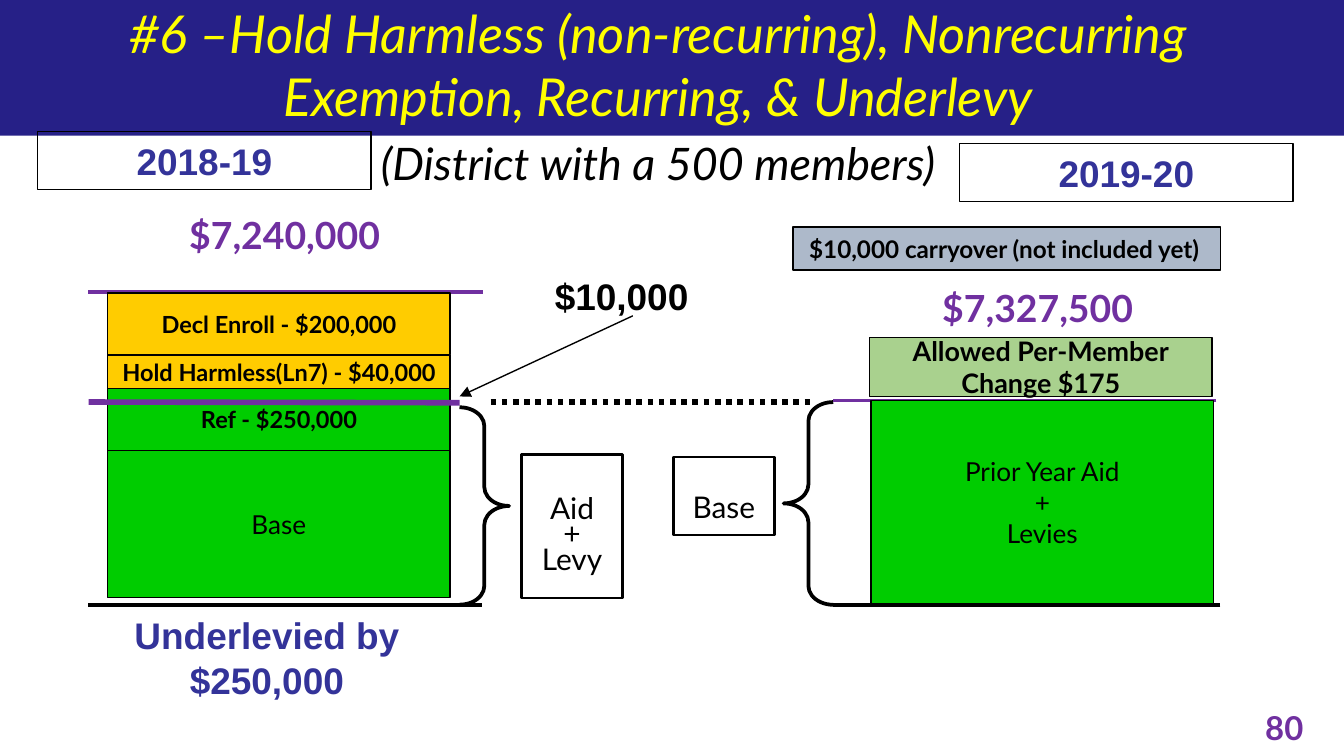
import collections

import pptx
import pptx.dml.color
import pptx.enum.dml
import pptx.enum.shapes
import pptx.enum.text
import pptx.oxml
import pptx.oxml.ns
import pptx.util

Pt = pptx.util.Pt
SHAPES = pptx.enum.shapes.MSO_SHAPE
ANCHOR = pptx.enum.text.MSO_ANCHOR
Box = collections.namedtuple("Box", "left top width height")

COLORS = {
    "black": "000000",
    "banner": "262087",
    "yellow": "FFFF00",
    "purple": "7030A0",
    "navy": "333399",
    "green": "00CC00",
    "gold": "FFCC00",
    "sage": "A9D18E",
    "slate": "ADB9CA",
}
BAR_WIDTH = 183.6


def rgb(name):
    return pptx.dml.color.RGBColor.from_string(COLORS[name])


def inside(box, left, top, width, height):
    return Box(box.left + left, box.top + top, width, height)


def write(shape, text, size, color="black", font="Lato", bold=False,
          italic=False, wrap=True, anchor=ANCHOR.TOP):
    frame = shape.text_frame
    frame.text = text
    frame.word_wrap = wrap
    frame.vertical_anchor = anchor
    for paragraph in frame.paragraphs:
        paragraph.alignment = pptx.enum.text.PP_ALIGN.CENTER
        for run in paragraph.runs:
            run.font.name = font
            run.font.size = Pt(size)
            run.font.bold = bold
            run.font.italic = italic
            run.font.color.rgb = rgb(color)


def add_label(slide, box, text, size, **style):
    label = slide.shapes.add_textbox(*map(Pt, box))
    write(label, text, size, **style)
    return label


def add_outline(slide, box, fill=None, line="black", weight=0.75, kind=SHAPES.RECTANGLE):
    shape = slide.shapes.add_shape(kind, *map(Pt, box))
    shape.shadow.inherit = False
    if fill:
        shape.fill.solid()
        shape.fill.fore_color.rgb = rgb(fill)
    else:
        shape.fill.background()
    if line:
        shape.line.color.rgb = rgb(line)
        shape.line.width = Pt(weight)
    else:
        shape.line.fill.background()
    return shape


def add_bar(slide, box, text, size, fill, bold=True):
    bar = add_outline(slide, box, fill)
    write(bar, text, size, bold=bold, wrap=False, anchor=ANCHOR.MIDDLE)


def add_year(slide, box, text):
    write(add_outline(slide, box), text, 19.8, color="navy", font="Arial", bold=True)


def add_brace(slide, box, kind):
    brace = add_outline(slide, box, weight=2, kind=kind)
    brace.adjustments[0] = 0.38
    brace.adjustments[1] = 0.5


def add_line(slide, box, start, end, color="black", weight=2):
    line = slide.shapes.add_connector(
        pptx.enum.shapes.MSO_CONNECTOR.STRAIGHT,
        Pt(box.left + start[0]), Pt(box.top + start[1]),
        Pt(box.left + end[0]), Pt(box.top + end[1]))
    line.line.color.rgb = rgb(color)
    line.line.width = Pt(weight)
    pptx.oxml.ns.qn("a:effectLst")
    line._element.spPr.append(pptx.oxml.parse_xml(
        "<a:effectLst %s/>" % pptx.oxml.ns.nsdecls("a")))
    return line


def add_tight_box(slide, box, text, top_inset):
    shape = add_outline(slide, box, weight=1.5)
    write(shape, text, 16)
    shape.text_frame.margin_top = Pt(top_inset)
    for paragraph in shape.text_frame.paragraphs:
        paragraph.line_spacing = Pt(13.7)


def add_header(slide, box):
    add_outline(slide, box, "banner", line=None)
    title = add_label(
        slide, inside(box, 0, -3, 714, 110),
        "#6 –Hold Harmless (non-recurring), Nonrecurring Exemption, Recurring, & Underlevy\n"
        "(District with a 500 members)",
        28, color="yellow", italic=True)
    title.text_frame.margin_right = Pt(16)
    subtitle = title.text_frame.paragraphs[1]
    subtitle.space_before = Pt(4.8)
    subtitle.runs[0].font.size = Pt(24)
    subtitle.runs[0].font.color.rgb = rgb("black")


def add_prior_year(slide, box):
    add_year(slide, inside(box, 0, 0, 178.6, 31), "2018-19")
    add_label(slide, inside(box, 43, 39.6, 178.6, 31.7), "$7,240,000", 20,
              color="purple", bold=True)
    add_line(slide, box, (238, 253.5), (27, 253.5))
    add_line(slide, box, (238.5, 85.7), (27, 85.7), "purple", 2.25)
    top = 86.5
    for text, size, height, fill, bold in (
        ("Decl Enroll - $200,000", 12.6, 33, "gold", True),
        ("Hold Harmless(Ln7) - $40,000", 12.6, 18, "gold", True),
        ("Ref - $250,000", 12.6, 33.2, "green", True),
        ("Base", 14, 78.8, "green", False),
    ):
        add_bar(slide, inside(box, 37.4, top, BAR_WIDTH, height), text, size, fill, bold)
        top += height
    add_line(slide, box, (226, 145.2), (27.3, 144.8), "purple", 3)
    add_label(slide, inside(box, 9.4, 254.2, 226.8, 55.5), "Underlevied by $250,000", 19.8,
              color="navy", font="Arial", bold=True)


def add_comparison(slide, box):
    add_brace(slide, inside(box, 0, 75, 26.6, 105.8), SHAPES.RIGHT_BRACE)
    add_tight_box(slide, inside(box, 33.2, 100.2, 54, 77), "Aid\n+\nLevy", 24.3)
    add_tight_box(slide, inside(box, 114.6, 101.6, 54, 41.8), "Base", 22.7)
    add_brace(slide, inside(box, 173.6, 72.2, 26.6, 108.6), SHAPES.LEFT_BRACE)
    add_label(slide, inside(box, 38.2, 0, 97.2, 31), "$10,000", 19.8, font="Arial", bold=True)
    arrow = add_line(slide, box, (92.8, 26), (0, 69.2), weight=0.75)
    arrow.line._get_or_add_ln().append(pptx.oxml.parse_xml(
        '<a:tailEnd %s type="triangle"/>' % pptx.oxml.ns.nsdecls("a")))
    dots = add_line(slide, box, (16.6, 72.2), (189.4, 72.2), weight=3)
    dots.line.dash_style = pptx.enum.dml.MSO_LINE.ROUND_DOT


def add_next_year(slide, box):
    add_year(slide, inside(box, 89.3, 0, 178.6, 31), "2019-20")
    carryover = add_outline(slide, inside(box, 0, 44.7, 229, 23), "slate")
    write(carryover, "$10,000 carryover (not included yet)", 13, bold=True)
    carryover.text_frame.margin_right = Pt(10)
    add_label(slide, inside(box, 45.4, 72, 171.4, 31.7), "$7,327,500", 20,
              color="purple", bold=True)
    add_line(slide, box, (229, 247), (21.6, 247))
    add_line(slide, box, (226.8, 137.5), (21.6, 137.5), "purple")
    add_bar(slide, inside(box, 41, 103.7, BAR_WIDTH, 31.7),
            "Allowed Per-Member\nChange $175", 14.4, "sage")
    add_bar(slide, inside(box, 41.8, 137.6, BAR_WIDTH, 108.7),
            "Prior Year Aid\n+\nLevies", 14, "green", False)


def add_page_number(slide, box):
    add_label(slide, box, "80", 17.6, color="purple", bold=True)


def main():
    presentation = pptx.Presentation()
    presentation.slide_width = Pt(720)
    presentation.slide_height = Pt(405)
    slide = presentation.slides.add_slide(presentation.slide_layouts[6])
    add_header(slide, Box(0, 0, 720, 72.7))
    add_prior_year(slide, Box(20.2, 70.6, 240, 310))
    add_comparison(slide, Box(246.2, 143.2, 200, 181))
    add_next_year(slide, Box(424.8, 77, 268, 248))
    add_page_number(slide, Box(668.2, 375.8, 39.6, 23))
    presentation.save("out.pptx")


if __name__ == "__main__":
    main()
